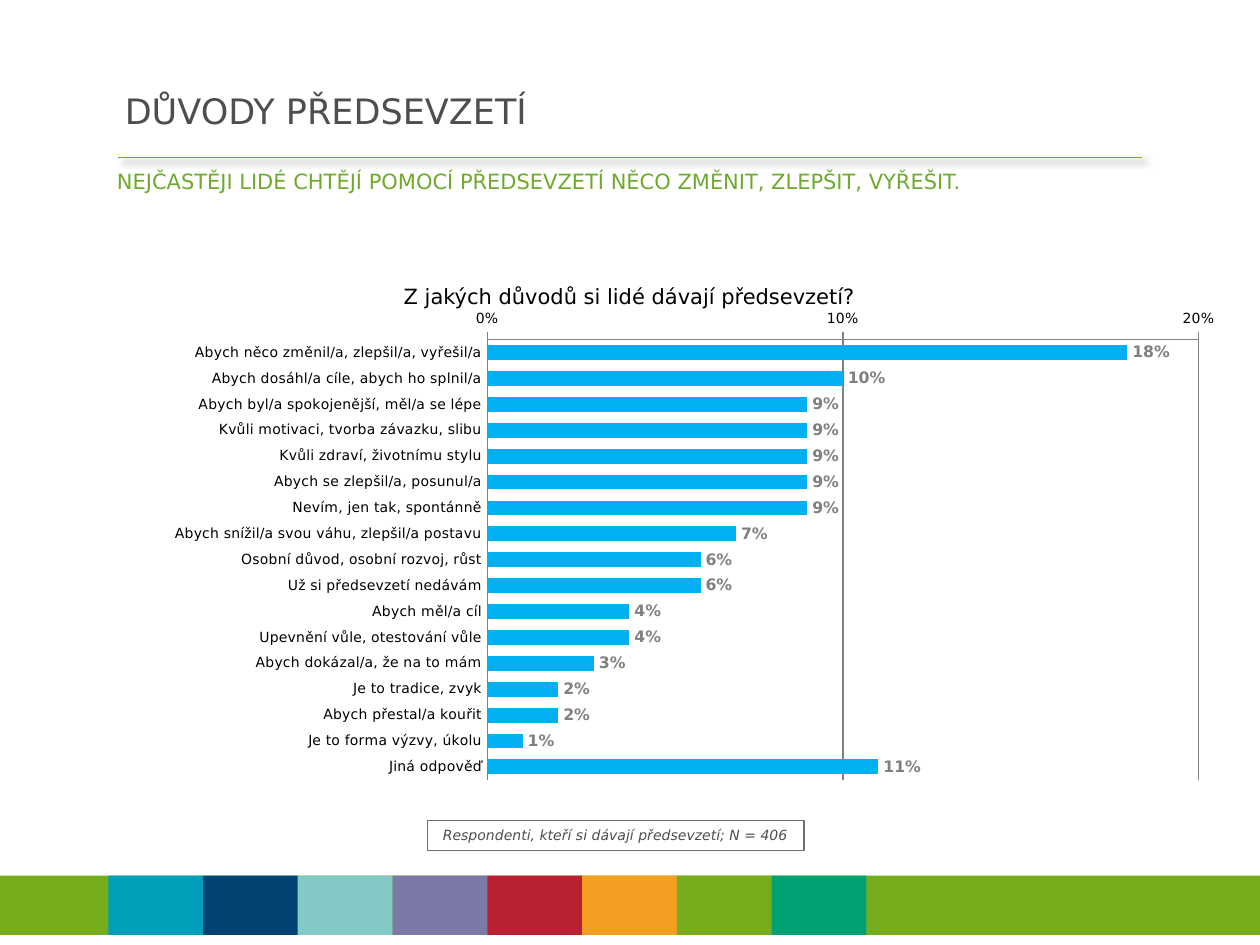
from typing import NamedTuple

from lxml import etree
from pptx import Presentation
from pptx.chart.data import CategoryChartData
from pptx.dml.color import RGBColor
from pptx.enum.chart import XL_AXIS_CROSSES, XL_CHART_TYPE, XL_LABEL_POSITION, XL_TICK_MARK
from pptx.enum.shapes import MSO_CONNECTOR, MSO_SHAPE
from pptx.enum.text import MSO_ANCHOR, MSO_AUTO_SIZE, PP_ALIGN
from pptx.oxml import parse_xml
from pptx.oxml.ns import nsdecls, qn
from pptx.util import Inches, Pt

LEFT, CENTER = PP_ALIGN.LEFT, PP_ALIGN.CENTER
TOP, MIDDLE = MSO_ANCHOR.TOP, MSO_ANCHOR.MIDDLE
BAR = XL_CHART_TYPE.BAR_CLUSTERED
RECTANGLE = MSO_SHAPE.RECTANGLE

FONT = "DejaVu Sans"
SLIDE_WIDTH, SLIDE_HEIGHT = Inches(10), Inches(7.5)
COLORS = {
    "text": "4E4E4E", "black": "000000", "accent": "6EAA2E", "green": "77AD1C",
    "border": "6E6E6E", "axis": "808080", "bar": "00B0F0", "cyan": "009FBB",
    "navy": "004272", "aqua": "83C9C6", "violet": "7C78A8", "red": "B92032",
    "orange": "F49F22", "teal": "00A275",
}
STRIPES = ["cyan", "navy", "aqua", "violet", "red", "orange", "green", "teal"]


class Box(NamedTuple):
    """A place in percent of the slide's width and height."""
    left: float
    top: float
    width: float
    height: float

    def emu(self) -> tuple[int, ...]:
        sides = (SLIDE_WIDTH, SLIDE_HEIGHT) * 2
        return tuple(round(share * side / 100) for share, side in zip(self, sides))


class Reason(NamedTuple):
    answer: str
    percent: int


TITLE = Box(8.9, 8.27, 88.7, 6.8)
SUBTITLE = Box(8.3, 17.2, 83.5, 7.33)
CHART = Box(3.5, 30.4, 92.9, 55.47)
CHART_TITLE = Box(3.5, 29.33, 92.9, 4)
SAMPLE_NOTE = Box(33.9, 86.8, 29.9, 3.2)
RULE = Box(9.4, 16.67, 81.2, 0)
BAND = Box(0, 92.67, 100, 6.27)
STRIPE_START, STRIPE_WIDTH = 8.6, 7.52
PLOT = {"x": 0.38, "y": 0.1, "w": 0.61, "h": 0.84}

REASONS = [
    Reason("Abych něco změnil/a, zlepšil/a, vyřešil/a", 18),
    Reason("Abych dosáhl/a cíle, abych ho splnil/a", 10),
    Reason("Abych byl/a spokojenější, měl/a se lépe", 9),
    Reason("Kvůli motivaci, tvorba závazku, slibu", 9),
    Reason("Kvůli zdraví, životnímu stylu", 9),
    Reason("Abych se zlepšil/a, posunul/a", 9),
    Reason("Nevím, jen tak, spontánně", 9),
    Reason("Abych snížil/a svou váhu, zlepšil/a postavu", 7),
    Reason("Osobní důvod, osobní rozvoj, růst", 6),
    Reason("Už si předsevzetí nedávám", 6),
    Reason("Abych měl/a cíl", 4),
    Reason("Upevnění vůle, otestování vůle", 4),
    Reason("Abych dokázal/a, že na to mám", 3),
    Reason("Je to tradice, zvyk", 2),
    Reason("Abych přestal/a kouřit", 2),
    Reason("Je to forma výzvy, úkolu", 1),
    Reason("Jiná odpověď", 11),
]


def color(name: str) -> RGBColor:
    return RGBColor.from_string(COLORS[name])


def style_font(font, size: float, color_name: str, bold=False, italic=False) -> None:
    font.name, font.size = FONT, Pt(size)
    font.bold, font.italic = bold, italic
    font.color.rgb = color(color_name)


def write(shape, text: str, *, size: float, color_name: str, align=LEFT,
          anchor=TOP, italic=False, space_after=0) -> None:
    frame = shape.text_frame
    frame.word_wrap = True
    frame.auto_size = MSO_AUTO_SIZE.NONE
    frame.vertical_anchor = anchor
    paragraph = frame.paragraphs[0]
    paragraph.alignment = align
    paragraph.space_before, paragraph.space_after = Pt(0), Pt(space_after)
    run = paragraph.add_run()
    run.text = text
    style_font(run.font, size, color_name, italic=italic)


def add_rectangle(slide, box: Box, fill: str = "", line: str = ""):
    shape = slide.shapes.add_shape(RECTANGLE, *box.emu())
    shape.shadow.inherit = False
    if fill:
        shape.fill.solid()
        shape.fill.fore_color.rgb = color(fill)
    else:
        shape.fill.background()
    if line:
        shape.line.color.rgb = color(line)
        shape.line.width = Pt(0.75)
    else:
        shape.line.fill.background()
    return shape


def add_rule(slide, box: Box) -> None:
    left, top, width, height = box.emu()
    rule = slide.shapes.add_connector(
        MSO_CONNECTOR.STRAIGHT, left, top, left + width, top + height)
    rule.line.color.rgb = color("green")
    rule.line.width = Pt(0.75)
    # Soft shadow: 4 pt blur, 3 pt away, at 45 degrees
    rule._element.spPr.append(parse_xml(
        f'<a:effectLst {nsdecls("a")}><a:outerShdw blurRad="{Pt(4)}" dist="{Pt(3)}" '
        f'dir="{45 * 60000}" rotWithShape="0"><a:srgbClr val="{COLORS["black"]}">'
        '<a:alpha val="40000"/></a:srgbClr></a:outerShdw></a:effectLst>'))


def set_plot_layout(chart) -> None:
    plot_area = chart._chartSpace.chart.plotArea
    for old in plot_area.findall(qn("c:layout")):
        plot_area.remove(old)
    layout = etree.Element(qn("c:layout"))
    manual = etree.SubElement(layout, qn("c:manualLayout"))
    settings = {"layoutTarget": "inner", "xMode": "edge", "yMode": "edge", **PLOT}
    for tag, value in settings.items():
        etree.SubElement(manual, qn(f"c:{tag}")).set("val", str(value))
    plot_area.insert(0, layout)


def add_reasons_chart(slide, box: Box, reasons: list[Reason]) -> None:
    data = CategoryChartData(number_format="0%")
    data.categories = [reason.answer for reason in reasons]
    data.add_series("Series 1", [reason.percent / 100 for reason in reasons])
    chart = slide.shapes.add_chart(BAR, *box.emu(), data).chart
    chart.has_title = chart.has_legend = False
    style_font(chart.font, 8, "black")
    set_plot_layout(chart)

    # Bars and their values
    plot = chart.plots[0]
    plot.gap_width, plot.vary_by_categories = 75, False
    bars = plot.series[0].format.fill
    bars.solid()
    bars.fore_color.rgb = color("bar")
    plot.has_data_labels = True
    labels = plot.data_labels
    labels.show_value = True
    labels.number_format, labels.number_format_is_linked = "0%", False
    labels.position = XL_LABEL_POSITION.OUTSIDE_END
    style_font(labels.font, 9, "axis", bold=True)

    # Axes: first answer on top, percentages along the bottom
    answers, shares = chart.category_axis, chart.value_axis
    answers.reverse_order = True
    answers.crosses = XL_AXIS_CROSSES.MAXIMUM
    answers.major_tick_mark = XL_TICK_MARK.NONE
    answers.has_major_gridlines = False
    shares.minimum_scale, shares.maximum_scale, shares.major_unit = 0, 0.2, 0.1
    shares.major_tick_mark = XL_TICK_MARK.OUTSIDE
    shares.has_major_gridlines = True
    shares.tick_labels.number_format = "0%"
    shares.tick_labels.number_format_is_linked = False
    for axis in (answers, shares):
        style_font(axis.tick_labels.font, 8, "black")
    for part in (answers, shares, shares.major_gridlines):
        part.format.line.color.rgb = color("axis")
        part.format.line.width = Pt(0.75)


def main() -> None:
    prs = Presentation()
    prs.slide_width, prs.slide_height = SLIDE_WIDTH, SLIDE_HEIGHT
    slide = prs.slides.add_slide(prs.slide_layouts.get_by_name("Title Only"))

    # Rule and colour band
    add_rule(slide, RULE)
    add_rectangle(slide, BAND, fill="green")
    for column, stripe in enumerate(STRIPES):
        left = STRIPE_START + column * STRIPE_WIDTH
        add_rectangle(slide, BAND._replace(left=left, width=STRIPE_WIDTH), fill=stripe)

    # Headings
    title = slide.shapes.title
    title.left, title.top, title.width, title.height = TITLE.emu()
    write(title, "DŮVODY PŘEDSEVZETÍ", size=20, color_name="text",
          anchor=MIDDLE, space_after=3)
    write(slide.shapes.add_textbox(*SUBTITLE.emu()),
          "NEJČASTĚJI LIDÉ CHTĚJÍ POMOCÍ PŘEDSEVZETÍ NĚCO ZMĚNIT, ZLEPŠIT, VYŘEŠIT.",
          size=12, color_name="accent")

    # Chart with its heading and sample note
    add_reasons_chart(slide, CHART, REASONS)
    write(slide.shapes.add_textbox(*CHART_TITLE.emu()),
          "Z jakých důvodů si lidé dávají předsevzetí?",
          size=12, color_name="black", align=CENTER)
    write(add_rectangle(slide, SAMPLE_NOTE, line="border"),
          "Respondenti, kteří si dávají předsevzetí; N = 406",
          size=8, color_name="text", align=CENTER, italic=True)
    prs.save("out.pptx")


if __name__ == "__main__":
    main()
